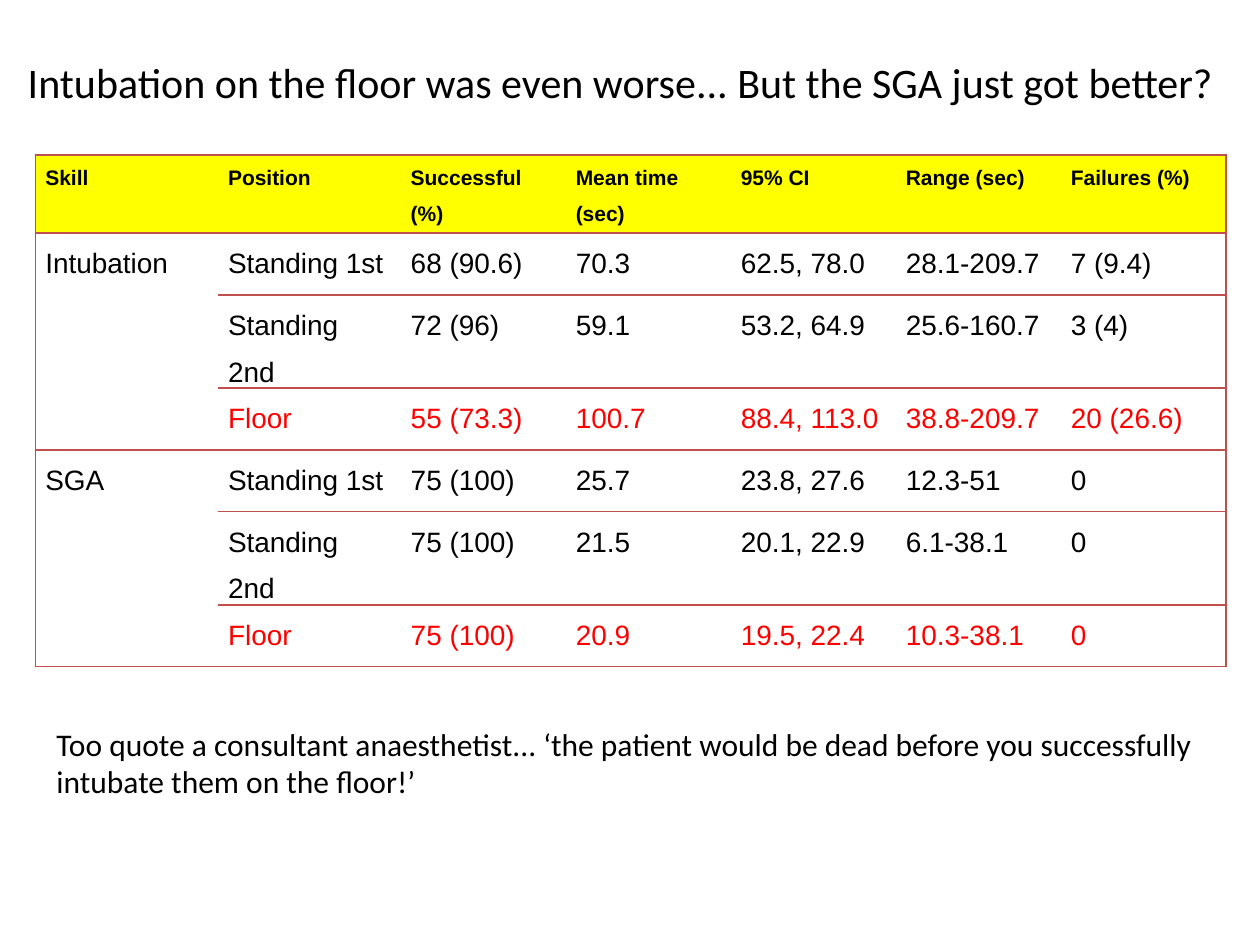
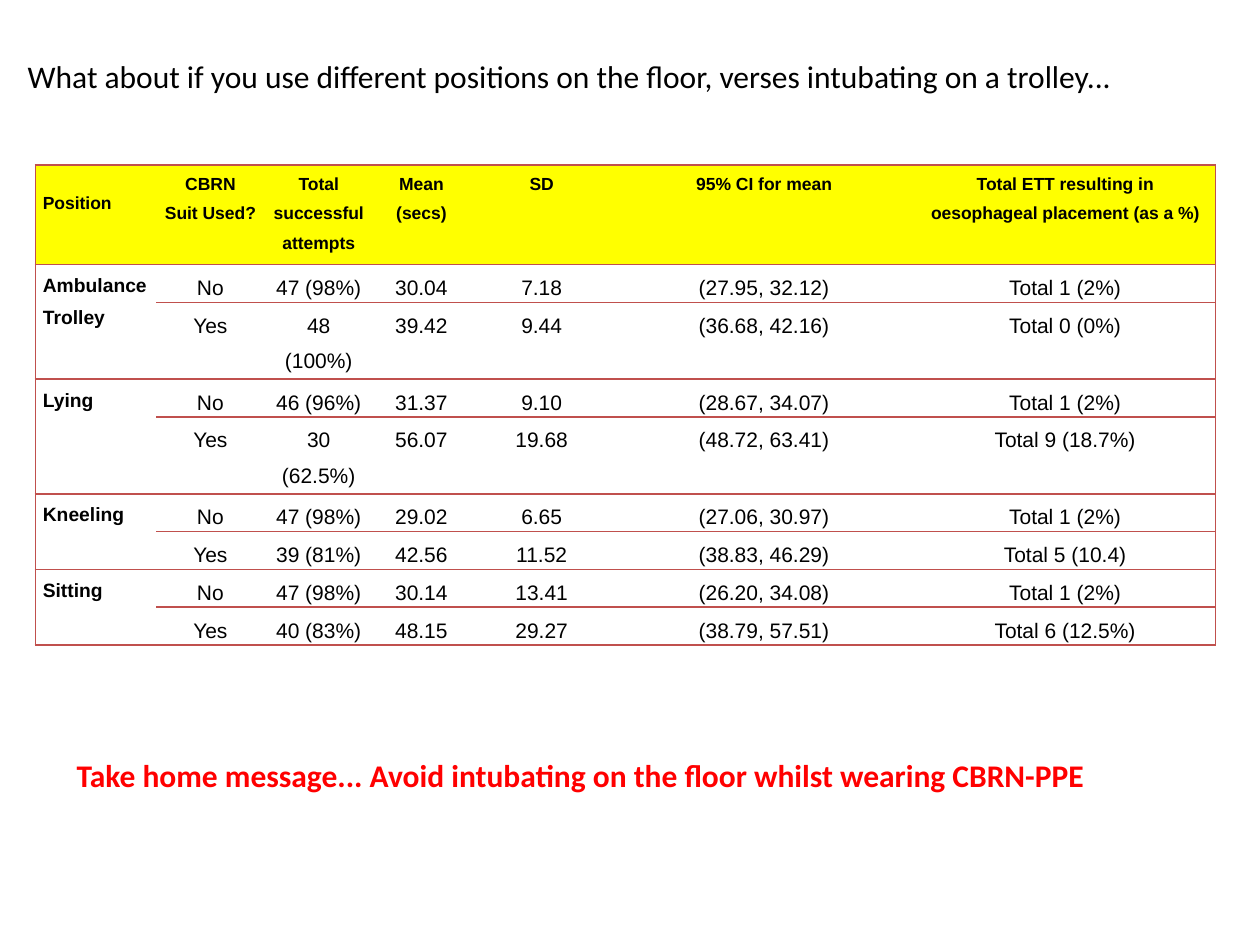
from lxml import etree
from pptx import Presentation
from pptx import util as u
from pptx.dml import color
from pptx.enum import text
from pptx.oxml import ns

BLACK, RED, YELLOW, RULE = "000000", "FF0000", "FFFF00", "C0504D"
PLAIN_TABLE = "{2D5ABB26-0587-4C30-8999-92F81FD0307C}"
LEFT, CENTER = text.PP_ALIGN.LEFT, text.PP_ALIGN.CENTER


def rgb(value):
    """Turn a hex string into a colour."""
    return color.RGBColor.from_string(value)


class Deck:
    """Hold the shared style and the current slide."""

    body_font = "Calibri"
    table_font = "Arial"

    def __init__(self):
        """Start an empty presentation."""
        self.presentation = Presentation()
        self.presentation.slide_width = u.Inches(10)
        self.presentation.slide_height = u.Inches(7.5)
        self.slide = None

    def add_run(self, paragraph, words, font, size, hue=BLACK, bold=False):
        """Add one formatted run."""
        run = paragraph.add_run()
        run.text = words
        run.font.name = font
        run.font.size = u.Pt(size)
        run.font.bold = bold
        run.font.color.rgb = rgb(hue)

    def add_slide(self, title, size, width, height):
        """Add a slide with its title."""
        layout = self.presentation.slide_layouts[5]
        self.slide = self.presentation.slides.add_slide(layout)
        shape = self.slide.shapes.title
        shape.left, shape.top = u.Inches(0.12), u.Inches(0.3)
        shape.width, shape.height = u.Inches(width), u.Inches(height)
        frame = shape.text_frame
        frame.auto_size = text.MSO_AUTO_SIZE.NONE
        frame.vertical_anchor = text.MSO_ANCHOR.MIDDLE
        frame.paragraphs[0].alignment = LEFT
        self.add_run(frame.paragraphs[0], title, self.body_font, size)

    def add_note(self, words, left, top, width, height, hue=BLACK, bold=False):
        """Add a remark that rests on the bottom of its box."""
        box = self.slide.shapes.add_textbox(
            u.Inches(left), u.Inches(top), u.Inches(width), u.Inches(height))
        frame = box.text_frame
        frame.word_wrap = True
        frame.vertical_anchor = text.MSO_ANCHOR.BOTTOM
        self.add_run(frame.paragraphs[0], words, self.body_font, 18, hue, bold)

    def add_table(self, top, widths, heights, rows, inset):
        """Add a plain table whose blank first cells join the cell above."""
        frame = self.slide.shapes.add_table(
            len(rows), len(widths), u.Inches(0.28), u.Inches(top),
            u.Inches(sum(widths)), u.Inches(sum(heights)))
        table = frame.table
        frame._element.find(".//" + ns.qn("a:tableStyleId")).text = PLAIN_TABLE
        for column, width in zip(table.columns, widths):
            column.width = u.Inches(width)
        for row, height in zip(table.rows, heights):
            row.height = u.Inches(height)
        start = 0
        for index in range(1, len(rows) + 1):
            if index == len(rows) or rows[index][0]:
                if index - start > 1:
                    table.cell(start, 0).merge(table.cell(index - 1, 0))
                start = index
        last = len(widths) - 1
        for row_index in range(len(rows)):
            for column_index in range(len(widths)):
                cell = table.cell(row_index, column_index)
                cell.margin_left = cell.margin_right = u.Inches(inset)
                cell.margin_top = cell.margin_bottom = 0
                if row_index == 0:
                    cell.fill.solid()
                    cell.fill.fore_color.rgb = rgb(YELLOW)
                else:
                    cell.fill.background()
                ruled = not cell.is_spanned
                self.set_borders(cell, {
                    "lnL": column_index == 0, "lnR": column_index == last,
                    "lnT": ruled, "lnB": ruled})
        return table

    def set_borders(self, cell, sides):
        """Rule or clear each side of a cell."""
        properties = cell._tc.get_or_add_tcPr()
        for index, (side, ruled) in enumerate(sides.items()):
            line = etree.Element(ns.qn("a:" + side), w=str(u.Pt(1)))
            if ruled:
                fill = etree.SubElement(line, ns.qn("a:solidFill"))
                etree.SubElement(fill, ns.qn("a:srgbClr"), val=RULE)
            else:
                etree.SubElement(line, ns.qn("a:noFill"))
            properties.insert(index, line)

    def fill_cell(self, cell, words, size, hue=BLACK, bold=False, align=LEFT):
        """Write each line of a cell as a paragraph."""
        frame = cell.text_frame
        for index, line in enumerate(words.split("\n")):
            paragraph = frame.add_paragraph() if index else frame.paragraphs[0]
            paragraph.alignment = align
            paragraph.line_spacing = 1.5
            self.add_run(paragraph, line, self.table_font, size, hue, bold)


SKILL_ROWS = [
    ("Skill", "Position", "Successful (%)", "Mean time (sec)", "95% CI",
     "Range (sec)", "Failures (%)"),
    ("Intubation", "Standing 1st", "68 (90.6)", "70.3", "62.5, 78.0",
     "28.1-209.7", "7 (9.4)"),
    ("", "Standing 2nd", "72 (96)", "59.1", "53.2, 64.9", "25.6-160.7", "3 (4)"),
    ("", "Floor", "55 (73.3)", "100.7", "88.4, 113.0", "38.8-209.7", "20 (26.6)"),
    ("SGA", "Standing 1st", "75 (100)", "25.7", "23.8, 27.6", "12.3-51", "0"),
    ("", "Standing 2nd", "75 (100)", "21.5", "20.1, 22.9", "6.1-38.1", "0"),
    ("", "Floor", "75 (100)", "20.9", "19.5, 22.4", "10.3-38.1", "0"),
]

POSITION_ROWS = [
    ("Position", "CBRN\nSuit Used?", "Total\nsuccessful\nattempts",
     "Mean\n(secs)", "SD", "95% CI for mean",
     "Total ETT resulting in oesophageal placement (as a %)"),
    ("Ambulance\nTrolley", "No", "47 (98%)", "30.04", "7.18",
     "(27.95, 32.12)", "Total 1 (2%)"),
    ("", "Yes", "48 (100%)", "39.42", "9.44", "(36.68, 42.16)", "Total 0 (0%)"),
    ("Lying", "No", "46 (96%)", "31.37", "9.10", "(28.67, 34.07)", "Total 1 (2%)"),
    ("", "Yes", "30 (62.5%)", "56.07", "19.68", "(48.72, 63.41)",
     "Total 9 (18.7%)"),
    ("Kneeling", "No", "47 (98%)", "29.02", "6.65", "(27.06, 30.97)",
     "Total 1 (2%)"),
    ("", "Yes", "39 (81%)", "42.56", "11.52", "(38.83, 46.29)", "Total 5 (10.4)"),
    ("Sitting", "No", "47 (98%)", "30.14", "13.41", "(26.20, 34.08)",
     "Total 1 (2%)"),
    ("", "Yes", "40 (83%)", "48.15", "29.27", "(38.79, 57.51)",
     "Total 6 (12.5%)"),
]


def build_skill_slide(deck):
    """Build the comparison of skills by position."""
    deck.add_slide("Intubation on the floor was even worse... "
                   "But the SGA just got better?", 24, 9.69, 0.69)
    table = deck.add_table(1.23, [1.45] * 2 + [1.31] * 5,
                           [0.62] + [0.49] * 6, SKILL_ROWS, 0.08)
    for row_index, row in enumerate(SKILL_ROWS):
        header = row_index == 0
        for column_index, words in enumerate(row):
            if words:
                hue = RED if row[1] == "Floor" else BLACK
                deck.fill_cell(table.cell(row_index, column_index), words,
                               12 if header else 16, hue, header)
    deck.add_note("Too quote a consultant anaesthetist... ‘the patient would be "
                  "dead before you successfully intubate them on the floor!’",
                  0.35, 5.09, 9.37, 1.31)


def build_position_slide(deck):
    """Build the comparison of floor positions with a trolley."""
    deck.add_slide("What about if you use different positions on the floor, "
                   "verses intubating on a trolley...", 18, 9.76, 0.61)
    table = deck.add_table(1.31, [0.96, 0.86, 0.86, 0.77, 1.14, 2.39, 2.39],
                           [0.79] + [0.3, 0.61] * 2 + [0.3] * 4,
                           POSITION_ROWS, 0.06)
    for row_index, row in enumerate(POSITION_ROWS):
        for column_index, words in enumerate(row):
            if words:
                label = column_index == 0
                size = 10 if row_index == 0 else 11 if label else 12
                deck.fill_cell(table.cell(row_index, column_index), words, size,
                               bold=label or row_index == 0,
                               align=LEFT if label else CENTER)
    table.cell(0, 0).margin_top = u.Inches(0.15)
    deck.add_note("Take home message... Avoid intubating on the floor whilst "
                  "wearing CBRN-PPE", 0.51, 5.95, 8.74, 0.4, RED, True)


def main():
    """Build and save both slides."""
    deck = Deck()
    build_skill_slide(deck)
    build_position_slide(deck)
    deck.presentation.save("out.pptx")


if __name__ == "__main__":
    main()
